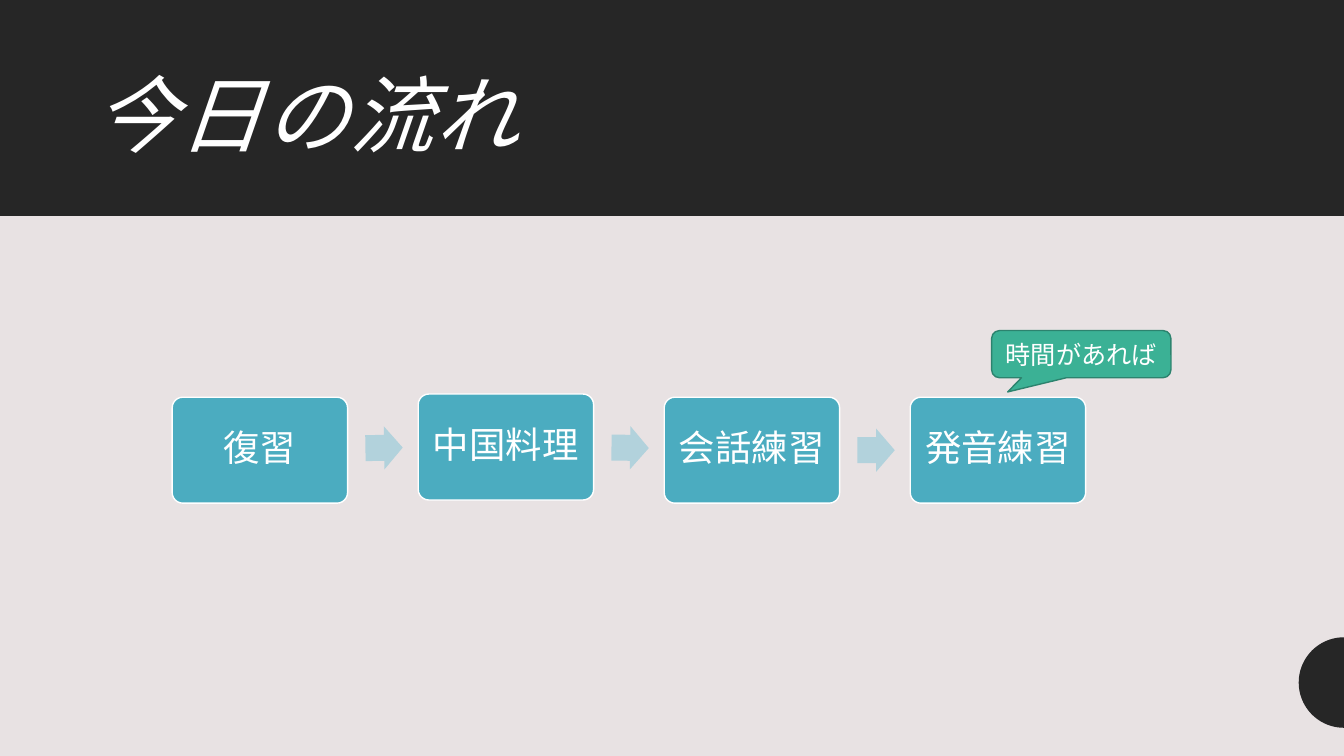
from dataclasses import dataclass
from math import cos, pi, sin

from pptx import Presentation
from pptx.dml.color import RGBColor
from pptx.enum.shapes import MSO_SHAPE as Preset
from pptx.enum.text import MSO_ANCHOR as Anchor, PP_ALIGN as Align
from pptx.shapes.autoshape import Shape
from pptx.slide import Slide
from pptx.util import Cm, Pt

DARK, PALE, WHITE = "262626", "E8E2E3", "FFFFFF"
TEAL, ARROW_BLUE = "4BACC0", "B2D2DC"
GREEN, DARK_GREEN = "3BB195", "2C836E"
PAGE_WIDTH, PAGE_HEIGHT = 33.87, 19.05
STEP_LEFT, STEP_PITCH, STEP_WIDTH, STEP_HEIGHT = 4.34, 6.2, 4.42, 2.67


@dataclass
class Step:
    label: str
    top: float = 10.01


@dataclass
class Arrow:
    top: float
    rotation: float = 0


STEPS = [Step("復習"), Step("中国料理", 9.93), Step("会話練習"), Step("発音練習")]
ARROWS = [Arrow(10.74, -0.8), Arrow(10.74, 0.8), Arrow(10.8)]


def color(value: str) -> RGBColor:
    return RGBColor.from_string(value)


def paint(shape: Shape, fill: str, line: str | None = None) -> None:
    shape.shadow.inherit = False
    shape.fill.solid()
    shape.fill.fore_color.rgb = color(fill)
    if line:
        shape.line.color.rgb = color(line)
        shape.line.width = Pt(1)
    else:
        shape.line.fill.background()


def add_preset(page: Slide, preset: Preset, left: float, top: float, width: float,
               height: float, fill: str, line: str | None = None,
               adjustments: tuple[float, ...] = ()) -> Shape:
    shape = page.shapes.add_shape(preset, Cm(left), Cm(top), Cm(width), Cm(height))
    paint(shape, fill, line)
    for index, value in enumerate(adjustments):
        shape.adjustments[index] = value
    return shape


def write(shape: Shape, text: str, size: float, font: str = "Arial",
          align: Align = Align.CENTER, line_spacing: float = 1) -> None:
    frame = shape.text_frame
    frame.word_wrap = True
    frame.vertical_anchor = Anchor.MIDDLE
    para = frame.paragraphs[0]
    para.text = text
    para.alignment = align
    para.line_spacing = line_spacing
    para.font.name = font
    para.font.size = Pt(size)
    para.font.color.rgb = color(WHITE)


def add_title(page: Slide, text: str) -> None:
    box = page.shapes.add_textbox(Cm(2.11), Cm(1.17), Cm(29.64), Cm(3.68))
    write(box, text, 60, "Lato", Align.LEFT, 0.9)
    para = box.text_frame.paragraphs[0]
    para.font.italic = True
    # Letter spacing of one point
    para.runs[0].font._element.set("spc", "100")


def add_half_disc(page: Slide, middle: float, radius: float, parts: int = 48) -> None:
    angles = [pi * part / parts for part in range(parts + 1)]
    points = [(Cm(PAGE_WIDTH - radius * sin(angle)), Cm(middle - radius * cos(angle)))
              for angle in angles]
    builder = page.shapes.build_freeform(*points[0])
    builder.add_line_segments(points[1:], close=True)
    paint(builder.convert_to_shape(), DARK)


def add_step(page: Slide, step: Step, left: float) -> None:
    box = add_preset(page, Preset.ROUNDED_RECTANGLE, left, step.top,
                     STEP_WIDTH, STEP_HEIGHT, TEAL, WHITE, (0.1,))
    write(box, step.label, 26, line_spacing=0.9)


def add_arrow(page: Slide, arrow: Arrow, left: float) -> None:
    shape = add_preset(page, Preset.RIGHT_ARROW, left, arrow.top, 0.94, 1.09,
                       ARROW_BLUE, adjustments=(0.6, 0.5))
    shape.rotation = arrow.rotation


def main() -> None:
    deck = Presentation()
    deck.slide_width, deck.slide_height = Cm(PAGE_WIDTH), Cm(PAGE_HEIGHT)
    page = deck.slides.add_slide(deck.slide_layouts[6])
    page.background.fill.solid()
    page.background.fill.fore_color.rgb = color(PALE)

    # Header band, title and corner half disc
    add_preset(page, Preset.RECTANGLE, 0, 0, PAGE_WIDTH, 5.44, DARK)
    add_title(page, "今日の流れ")
    add_half_disc(page, middle=17.2, radius=1.14)

    # Lesson flow
    lefts = [STEP_LEFT + index * STEP_PITCH for index in range(len(STEPS))]
    for step, left in zip(STEPS, lefts):
        add_step(page, step, left)
    for arrow, left in zip(ARROWS, lefts):
        add_arrow(page, arrow, left + STEP_WIDTH + 0.45)

    # Remark on the last step
    remark = add_preset(page, Preset.ROUNDED_RECTANGULAR_CALLOUT, 24.99, 8.33, 4.52, 1.19,
                        GREEN, DARK_GREEN, (-0.41, 0.8, 0.17))
    write(remark, "時間があれば", 18)

    deck.save("out.pptx")


if __name__ == "__main__":
    main()
